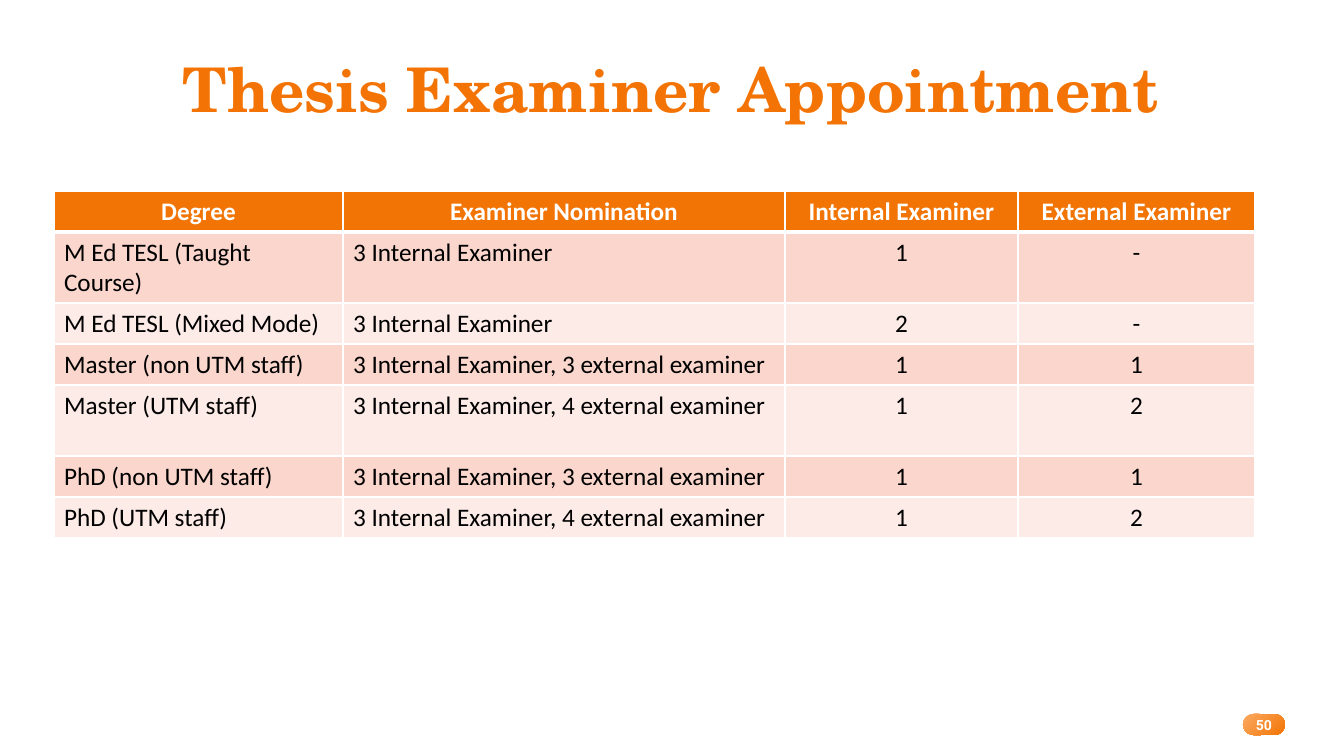
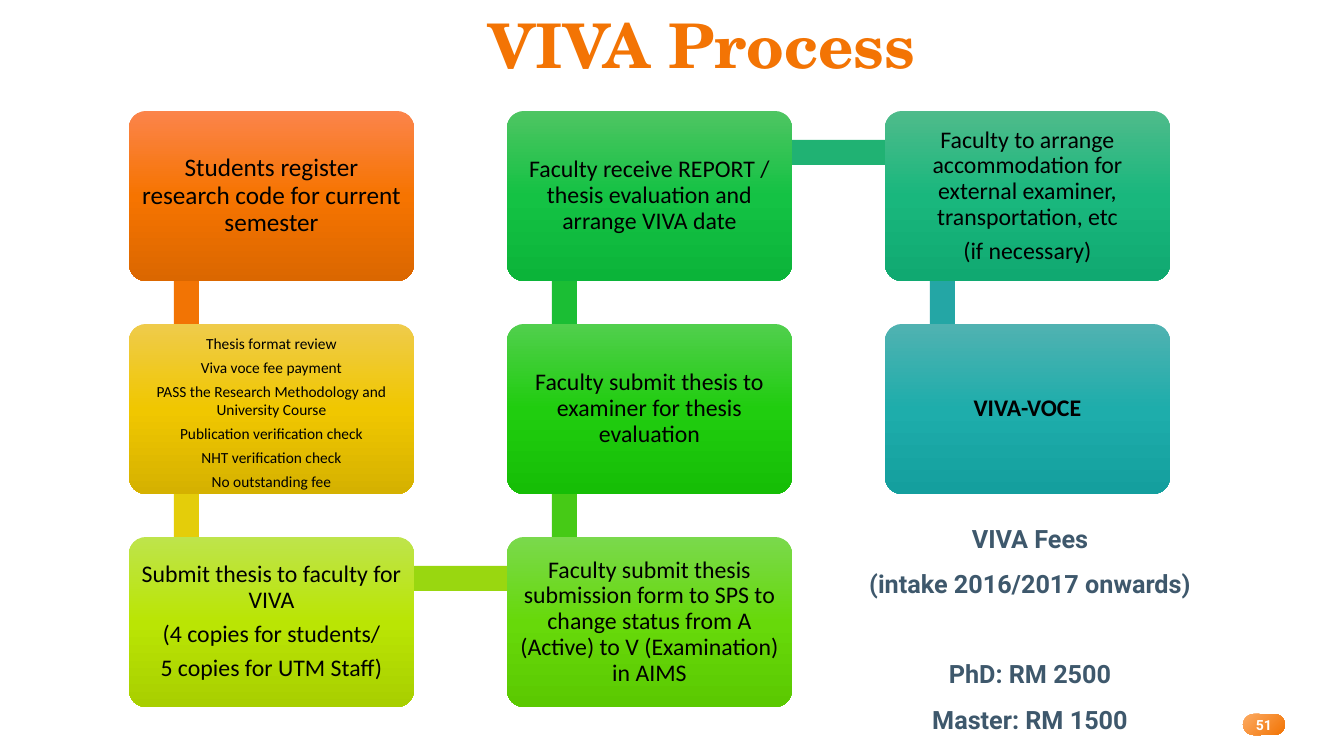
"""Build two slides on thesis examiner appointment and the viva process."""
from copy import deepcopy
from pptx import Presentation
from pptx.dml.color import RGBColor
from pptx.enum.shapes import MSO_SHAPE as Preset
from pptx.enum.text import MSO_ANCHOR as Anchor, PP_ALIGN as Align
from pptx.oxml.ns import qn
from pptx.oxml.xmlchemy import OxmlElement
from pptx.util import Emu, Pt

PX = 914400 / 100.8
ORANGE, TITLE_ORANGE, WHITE, BLACK, SLATE = "F27404", "F37404", "FFFFFF", "000000", "3E586C"
BODY, HEADING, ACCENT = "Calibri", "TeX Gyre Schola", "Roboto"
rgb = RGBColor.from_string


def place(shapes, preset, box, colours=(), angle=270):
    """Add a preset shape, or a text box when preset is None, at a px box."""
    bounds = [Emu(round(n * PX)) for n in box]
    if preset is None:
        return shapes.add_textbox(*bounds)
    shape = shapes.add_shape(preset, *bounds)
    shape.shadow.inherit = False
    shape.line.fill.background()
    if len(colours) == 1:
        shape.fill.solid()
        shape.fill.fore_color.rgb = rgb(colours[0])
        return shape
    shape.fill.gradient()
    shape.fill.gradient_angle = angle
    stop_list = shape._element.spPr.find(".//" + qn("a:gsLst"))
    for _ in colours[2:]:
        stop_list.append(deepcopy(stop_list[0]))
    for i, (stop, colour) in enumerate(zip(shape.fill.gradient_stops, colours)):
        stop.color.rgb = rgb(colour)
        stop.position = i / (len(colours) - 1)
    return shape


def write(frame, lines, size, font, colour, bold=False, align=Align.CENTER, spacing=1.0, after=0):
    """Fill a text frame with one paragraph per line."""
    for i, line in enumerate(lines):
        paragraph = frame.add_paragraph() if i else frame.paragraphs[0]
        paragraph.alignment = align
        paragraph.line_spacing = spacing
        paragraph.space_after = Pt(after)
        run = paragraph.add_run()
        run.text = line
        run.font.size, run.font.name, run.font.bold = Pt(size), font, bold
        run.font.color.rgb = rgb(colour)


deck = Presentation()
deck.slide_width, deck.slide_height = Emu(round(1344 * PX)), Emu(round(756 * PX))

pages = []
for heading, number, left, top in [("Thesis Examiner Appointment", "50", 58, 44),
                                   ("VIVA Process", "51", 89, 0)]:
    page = deck.slides.add_slide(deck.slide_layouts[6])
    pages.append(page.shapes)
    badge = place(page.shapes, Preset.ROUNDED_RECTANGLE, (1243, 714, 42, 21), ("FCAB63", ORANGE), 315)
    badge.adjustments[0] = 0.5
    number_frame = badge.text_frame
    number_frame.margin_left = number_frame.margin_right = 0
    number_frame.margin_top = number_frame.margin_bottom = 0
    number_frame.word_wrap = False
    number_frame.vertical_anchor = Anchor.MIDDLE
    write(number_frame, [number], 10, ACCENT, WHITE, bold=True)
    title_frame = place(page.shapes, None, (left, top, 1227, 98)).text_frame
    title_frame.word_wrap = True
    title_frame.vertical_anchor = Anchor.MIDDLE
    write(title_frame, [heading], 44, HEADING, TITLE_ORANGE, bold=True, spacing=0.9)
examiners, viva = pages

appointments = [
    ("Degree", "Examiner Nomination", "Internal Examiner", "External Examiner"),
    ("M Ed TESL (Taught Course)", "3 Internal Examiner", "1", "-"),
    ("M Ed TESL (Mixed Mode)", "3 Internal Examiner", "2", "-"),
    ("Master (non UTM staff)", "3 Internal Examiner, 3 external examiner", "1", "1"),
    ("Master (UTM staff)", "3 Internal Examiner, 4 external examiner", "1", "2"),
    ("PhD (non UTM staff)", "3 Internal Examiner, 3 external examiner", "1", "1"),
    ("PhD (UTM staff)", "3 Internal Examiner, 4 external examiner", "1", "2"),
]
widths = [289, 442, 233, 237]
heights = [41, 71, 41, 41, 71, 41, 41]
bounds = [Emu(round(n * PX)) for n in (54, 191, sum(widths), sum(heights))]
table = examiners.add_table(len(heights), len(widths), *bounds).table
for column, width in zip(table.columns, widths):
    column.width = Emu(round(width * PX))
for r, (entries, height) in enumerate(zip(appointments, heights)):
    table.rows[r].height = Emu(round(height * PX))
    for c, entry in enumerate(entries):
        cell = table.cell(r, c)
        for edge in ("lnL", "lnR", "lnT", "lnB"):
            under_header = (r, edge) in [(0, "lnB"), (1, "lnT")]
            border = OxmlElement("a:" + edge)
            border.set("w", str(Pt(3 if under_header else 1)))
            border_fill = OxmlElement("a:solidFill")
            border_colour = OxmlElement("a:srgbClr")
            border_colour.set("val", WHITE)
            border_fill.append(border_colour)
            border.append(border_fill)
            cell._tc.get_or_add_tcPr().append(border)
        cell.fill.solid()
        cell.fill.fore_color.rgb = rgb(ORANGE if r == 0 else "FAD6CC" if r % 2 else "FCEBE7")
        write(cell.text_frame, [entry], 18, BODY, BLACK if r else WHITE, bold=r == 0,
              align=Align.LEFT if r and c < 2 else Align.CENTER)

steps = [
    (0, 0, 18, ("FB844B", "F67400", "DB6700"), ORANGE,
     ["Students register research code for current semester"]),
    (0, 1, 11, ("EFCB4B", "F0C700", "D5B100"), "E4CD0A",
     ["Thesis format review", "Viva voce fee payment",
      "PASS the Research Methodology and University Course",
      "Publication verification check", "NHT verification check", "No outstanding fee"]),
    (0, 2, 17, ("BEE44B", "BAE504", "A8CF00"), "99D710",
     ["Submit thesis to faculty for VIVA", "(4 copies for students/", "5 copies for UTM Staff)"]),
    (1, 2, 17, ("7AD94C", "67D90A", "5BC901"), "46CA16",
     ["Faculty submit thesis submission form to SPS to change status from A (Active) "
      "to V (Examination) in AIMS"]),
    (1, 1, 17, ("51CF4D", "20CD0F", "16BE06"), "1BBE34",
     ["Faculty submit thesis to examiner for thesis evaluation"]),
    (1, 0, 17, ("4EC562", "14C244", "0BB439"), "20B273",
     ["Faculty receive REPORT / thesis evaluation and arrange VIVA date"]),
    (2, 0, 17, ("4FBB8B", "19B77D", "10A971"), "24A6A5",
     ["Faculty to arrange accommodation for external examiner, transportation, etc",
      "(if necessary)"]),
    (2, 1, 17, ("50B2B1", "1EADAB", "149F9E"), None, ["VIVA-VOCE"]),
]
STEP_X, STEP_Y = 378, 213
for i, (col, row, size, shades, link, lines) in enumerate(steps):
    x, y = 129 + col * STEP_X, 111 + row * STEP_Y
    if link:
        next_col, next_row = steps[i + 1][:2]
        if next_col == col:
            link_box = (x + 45, 153 + min(row, next_row) * STEP_Y, 25, STEP_Y)
        else:
            link_box = (x + 58, y + 29, STEP_X, 25)
        place(viva, Preset.RECTANGLE, link_box, (link,))
    card = place(viva, Preset.ROUNDED_RECTANGLE, (x, y, 285, 170), shades)
    card.adjustments[0] = 0.1
    card_frame = card.text_frame
    card_frame.word_wrap = True
    card_frame.vertical_anchor = Anchor.MIDDLE
    inset = Emu(round(7 * PX))
    card_frame.margin_left = card_frame.margin_right = inset
    card_frame.margin_top = card_frame.margin_bottom = inset
    dense = len(lines) > 3
    if dense:
        card_frame.margin_top = 2 * inset
    write(card_frame, lines, size, BODY, BLACK, bold=not link,
          spacing=1.0 if dense else 0.9, after=round(size * 0.35, 1))

fees = place(viva, None, (774, 503, 512, 234)).text_frame
fees.word_wrap = True
write(fees, ["VIVA Fees", "(intake 2016/2017 onwards)", "PhD: RM 2500", "Master: RM 1500"],
      18, ACCENT, SLATE, bold=True, spacing=1.5)
fees.paragraphs[2].space_before = Pt(32)

deck.save("out.pptx")
